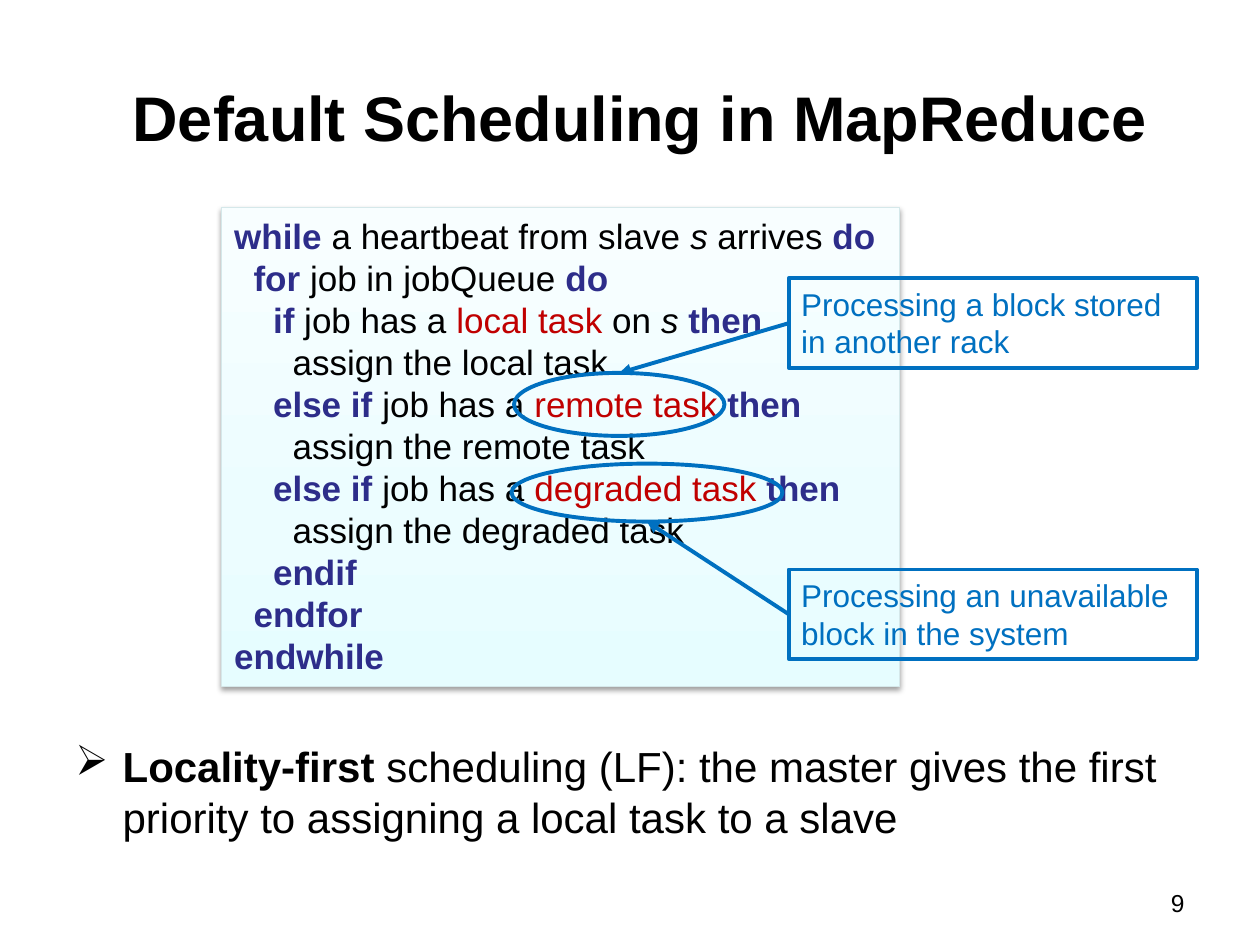
from lxml import etree
from pptx import Presentation
from pptx.dml.color import RGBColor
from pptx.enum.shapes import MSO_CONNECTOR, MSO_SHAPE
from pptx.enum.text import MSO_ANCHOR, PP_ALIGN
from pptx.oxml import parse_xml
from pptx.oxml.ns import nsdecls, qn
from pptx.util import Inches, Pt

RECTANGLE, OVAL = MSO_SHAPE.RECTANGLE, MSO_SHAPE.OVAL
STRAIGHT = MSO_CONNECTOR.STRAIGHT
LEFT, CENTER, RIGHT = PP_ALIGN.LEFT, PP_ALIGN.CENTER, PP_ALIGN.RIGHT
TOP, MIDDLE = MSO_ANCHOR.TOP, MSO_ANCHOR.MIDDLE
LEFT_SIDE = 1

COLORS = {
    "text": "000000", "keyword": "2D2D8A", "task": "C00000", "callout": "0070C0",
    "code_line": "D5E8EA", "code_bottom": "E6FDFF", "code_mid": "ECFDFF",
    "code_top": "F8FEFF", "shadow": "000000",
}
COLUMNS, ROWS = 100, 75
LINE_PITCH = 1.2
CODE_INDENT = 11.12  # points per nesting level

# Run styles: colour, bold, italic
PLAIN = ("text", False, False)
STRONG = ("text", True, False)
KEYWORD = ("keyword", True, False)
VARIABLE = ("text", False, True)
TASK = ("task", False, False)
CALLOUT = ("callout", False, False)


def rgb(name):
    return RGBColor.from_string(COLORS[name])


def write(shape, paragraphs, size, align=LEFT, anchor=TOP, hanging=0, bullet=None):
    """Fill a shape with paragraphs, each a (left indent in points, runs) pair."""
    frame = shape.text_frame
    frame.word_wrap = True
    frame.vertical_anchor = anchor
    for number, (indent, runs) in enumerate(paragraphs):
        paragraph = frame.paragraphs[0] if number == 0 else frame.add_paragraph()
        paragraph.alignment = align
        paragraph.line_spacing = Pt(size * LINE_PITCH)
        properties = paragraph._p.get_or_add_pPr()
        properties.set("marL", str(Pt(indent)))
        properties.set("indent", str(Pt(-hanging)))
        if bullet:
            etree.SubElement(properties, qn("a:buChar")).set("char", bullet)
        for words, (color, bold, italic) in runs:
            run = paragraph.add_run()
            run.text = words
            run.font.name = "Arial"
            run.font.size = Pt(size)
            run.font.bold, run.font.italic = bold, italic
            run.font.color.rgb = rgb(color)


class SlideBuilder:
    """Holds the style and the slide; places are in grid columns and rows."""

    def __init__(self, deck):
        self.slide = deck.slides.add_slide(deck.slide_layouts[6])
        self.column = deck.slide_width / COLUMNS
        self.row = deck.slide_height / ROWS
        self.accent = "callout"
        self.accent_width = 2.25

    def place(self, left, top, width, height):
        return (round(left * self.column), round(top * self.row),
                round(width * self.column), round(height * self.row))

    def text(self, at, paragraphs, size, **layout):
        write(self.slide.shapes.add_textbox(*self.place(*at)), paragraphs, size, **layout)

    def outline(self, kind, at):
        shape = self.slide.shapes.add_shape(kind, *self.place(*at))
        shape.shadow.inherit = False
        shape.fill.background()
        shape.line.color.rgb = rgb(self.accent)
        shape.line.width = Pt(self.accent_width)
        return shape

    def code_panel(self, at, lines, size):
        panel = self.outline(RECTANGLE, at)
        panel.line.color.rgb = rgb("code_line")
        panel.line.width = Pt(0.75)
        panel.fill.gradient()
        panel.fill.gradient_angle = 90
        properties = panel._element.spPr
        stop_list = properties.find(qn("a:gradFill")).find(qn("a:gsLst"))
        for stop in list(stop_list):
            stop_list.remove(stop)
        for share, name in ((0, "code_bottom"), (35, "code_mid"), (100, "code_top")):
            stop_list.append(parse_xml(
                f'<a:gs {nsdecls("a")} pos="{share * 1000}">'
                f'<a:srgbClr val="{COLORS[name]}"/></a:gs>'))
        properties.find(qn("a:effectLst")).append(parse_xml(
            f'<a:outerShdw {nsdecls("a")} blurRad="{Pt(3.1)}" dist="{Pt(1.6)}" '
            f'dir="5400000" rotWithShape="0"><a:srgbClr val="{COLORS["shadow"]}">'
            f'<a:alpha val="38000"/></a:srgbClr></a:outerShdw>'))
        write(panel, [(level * CODE_INDENT, runs) for level, runs in lines], size)

    def annotation(self, ring_at, callout_at, lines, from_below=False):
        """Ring a term and point to it from a callout box."""
        self.outline(OVAL, ring_at)
        callout = self.outline(RECTANGLE, callout_at)
        write(callout, [(0, [(line, CALLOUT)]) for line in lines], 18)
        left, top, width, height = self.place(*ring_at)
        self.arrow(callout, left + width // 2, top + height * from_below)

    def arrow(self, source, end_x, end_y):
        arrow = self.slide.shapes.add_connector(
            STRAIGHT, source.left, source.top + source.height // 2, end_x, end_y)
        arrow.begin_connect(source, LEFT_SIDE)
        arrow.line.color.rgb = rgb(self.accent)
        arrow.line.width = Pt(self.accent_width)
        etree.SubElement(arrow.line._get_or_add_ln(), qn("a:tailEnd")).set("type", "triangle")
        etree.SubElement(arrow._element.spPr, qn("a:effectLst"))


def branch(keyword, task, condition=()):
    """The two code lines that test for a kind of task and assign it."""
    return [
        (2, [(f"{keyword} ", KEYWORD), ("job has a ", PLAIN), (f"{task} task ", TASK),
             *condition, ("then", KEYWORD)]),
        (3, [(f"assign the {task} task", PLAIN)]),
    ]


def main():
    deck = Presentation()
    deck.slide_width, deck.slide_height = Inches(10), Inches(7.5)
    builder = SlideBuilder(deck)

    builder.text((3.3, 3, 95, 12.5), [(0, [("Default Scheduling in MapReduce", STRONG)])],
                 36, align=CENTER, anchor=MIDDLE)
    builder.text((5, 58.3, 90, 11.3), [(27, [
        ("Locality-first", STRONG),
        (" scheduling (LF): the master gives the first priority to assigning "
         "a local task to a slave", PLAIN)])], 24, hanging=27, bullet="➢")
    builder.text((71.7, 70, 23.3, 3.5), [(0, [("9", PLAIN)])], 14, align=RIGHT)

    builder.code_panel((17.6, 16.5, 53.8, 38), [
        (0, [("while", KEYWORD), (" a heartbeat from slave ", PLAIN), ("s", VARIABLE),
             (" arrives ", PLAIN), ("do", KEYWORD)]),
        (1, [("for", KEYWORD), (" job in jobQueue ", PLAIN), ("do", KEYWORD)]),
        *branch("if", "local", [("on ", PLAIN), ("s ", VARIABLE)]),
        *branch("else if", "remote"),
        *branch("else if", "degraded"),
        *[(level, [(word, KEYWORD)])
          for level, word in ((2, "endif"), (1, "endfor"), (0, "endwhile"))],
    ], 20)

    builder.annotation((40.8, 29.6, 16.7, 5), (62.6, 22.1, 32.4, 7.1),
                       ["Processing a block stored", "in another rack"])
    builder.annotation((40.6, 36.8, 21.5, 4.6), (62.6, 45.2, 32.4, 7.1),
                       ["Processing an unavailable block in the system"], from_below=True)

    deck.save("out.pptx")


if __name__ == "__main__":
    main()
